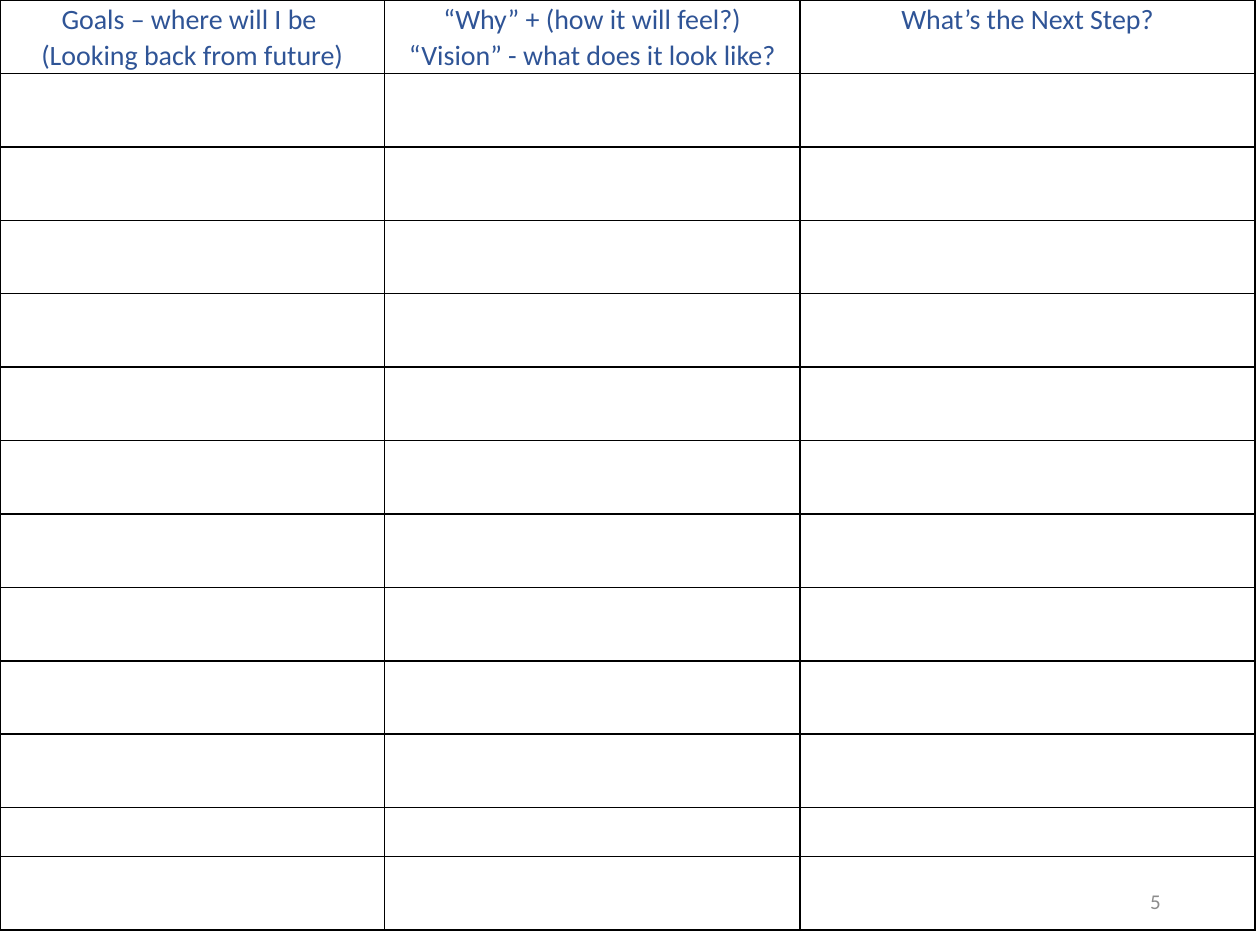
from lxml import etree
from pptx import Presentation
from pptx import util as u
from pptx.dml.color import RGBColor
from pptx.enum import text
from pptx.oxml import ns

BLUE = RGBColor(0x2F, 0x54, 0x96)
GRAY = RGBColor(0x8C, 0x8C, 0x8C)
BLACK = RGBColor(0x00, 0x00, 0x00)

HEADINGS = [
    "Goals – where will I be \n(Looking back from future)",
    "“Why” + (how it will feel?)\n“Vision” - what does it look like?",
    "What’s the Next Step?",
]
COLUMN_WIDTHS = [7.75, 8.38, 9.17]
ROW_HEIGHTS = [1.48] * 11 + [0.99, 1.48]


class Worksheet:
    font = "Calibri"
    border_width = u.Pt(1)

    def __init__(self, slide):
        self.slide = slide

    def style_text(self, frame, size, color, align, spacing=None):
        for line in frame.paragraphs:
            line.alignment = align
            line.line_spacing = spacing
            for run in line.runs:
                run.font.name = self.font
                run.font.size = u.Pt(size)
                run.font.bold = False
                run.font.color.rgb = color

    def page_number(self, number, left, top, width, height):
        box = self.slide.shapes.add_textbox(
            u.Cm(left), u.Cm(top), u.Cm(width), u.Cm(height))
        frame = box.text_frame
        frame.word_wrap = True
        frame.vertical_anchor = text.MSO_ANCHOR.MIDDLE
        frame.text = number
        self.style_text(frame, 12, GRAY, text.PP_ALIGN.RIGHT)

    def border(self, cell):
        properties = cell._tc.get_or_add_tcPr()
        for side in ("lnL", "lnR", "lnT", "lnB"):
            line = etree.SubElement(properties, ns.qn(f"a:{side}"),
                                    w=str(self.border_width))
            fill = etree.SubElement(line, ns.qn("a:solidFill"))
            etree.SubElement(fill, ns.qn("a:srgbClr"), val=str(BLACK))

    def grid(self, headings, widths, heights):
        table = self.slide.shapes.add_table(
            len(heights), len(widths), 0, 0,
            u.Cm(sum(widths)), u.Cm(sum(heights))).table
        table.first_row = table.horz_banding = False
        for column, width in zip(table.columns, widths):
            column.width = u.Cm(width)
        for row, height in zip(table.rows, heights):
            row.height = u.Cm(height)
        for cell in table.iter_cells():
            self.border(cell)
            cell.fill.background()
            cell.margin_left = cell.margin_right = u.Cm(0.13)
            cell.margin_top = cell.margin_bottom = 0
        for cell, heading in zip(table.rows[0].cells, headings):
            cell.text_frame.text = heading
            self.style_text(cell.text_frame, 16, BLUE,
                            text.PP_ALIGN.CENTER, 1.07)


def main():
    deck = Presentation()
    deck.slide_width, deck.slide_height = u.Cm(25.4), u.Cm(19.05)
    worksheet = Worksheet(deck.slides.add_slide(deck.slide_layouts[6]))

    # Page number, behind the unfilled table
    worksheet.page_number("5", 17.93, 17.65, 5.72, 1.02)

    # Goal planning table
    worksheet.grid(HEADINGS, COLUMN_WIDTHS, ROW_HEIGHTS)

    deck.save("out.pptx")


if __name__ == "__main__":
    main()
